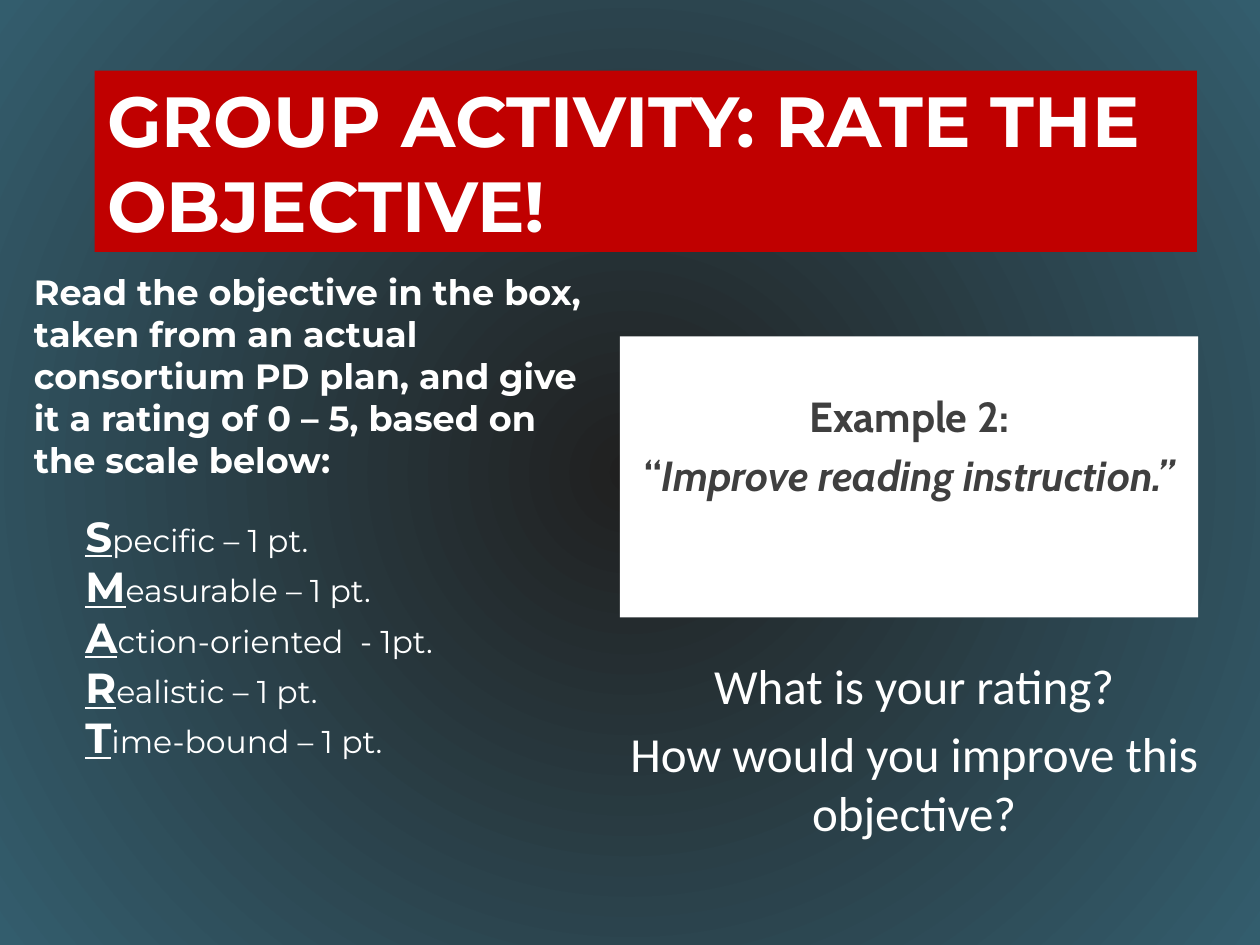
import pptx
import pptx.dml.color
import pptx.enum.shapes
import pptx.enum.text
import pptx.oxml
import pptx.oxml.ns
import pptx.util

Inches = pptx.util.Inches
Pt = pptx.util.Pt
Align = pptx.enum.text.PP_ALIGN
Anchor = pptx.enum.text.MSO_ANCHOR

WHITE = "FFFFFF"
RED = "C00000"
CHARCOAL = "3F3F3F"
GLOW = "202020"
TEAL = "335D6D"


def color(hex_value):
    return pptx.dml.color.RGBColor.from_string(hex_value)


class ActivitySlide:
    heading_font = "Montserrat"
    example_font = "Cabin"
    question_font = "Calibri"

    def __init__(self, deck):
        self.page = deck.slides.add_slide(deck.slide_layouts[5])

    def background(self, center, edge):
        """Fill the page with a gradient that spreads in circles from the middle."""
        fill = self.page.background.fill
        fill.gradient()
        for stop, position, shade in zip(fill.gradient_stops, (0, 1), (center, edge)):
            stop.position = position
            stop.color.rgb = color(shade)
        gradient = self.page.element.find(".//" + pptx.oxml.ns.qn("a:gradFill"))
        linear = gradient.find(pptx.oxml.ns.qn("a:lin"))
        circle = pptx.oxml.parse_xml(
            f'<a:path {pptx.oxml.ns.nsdecls("a")} path="circle">'
            '<a:fillToRect l="50000" t="50000" r="50000" b="50000"/></a:path>'
        )
        gradient.replace(linear, circle)

    def add_paragraphs(self, box, paragraphs, font, ink, align=Align.LEFT,
                       anchor=Anchor.TOP, gap=0, top_inset=0.05):
        """Each paragraph is a list of (text, size, font attributes)."""
        frame = box.text_frame
        frame.word_wrap = True
        frame.auto_size = pptx.enum.text.MSO_AUTO_SIZE.NONE
        frame.vertical_anchor = anchor
        frame.margin_top = Inches(top_inset)
        for index, spans in enumerate(paragraphs):
            para = frame.add_paragraph() if index else frame.paragraphs[0]
            para.alignment = align
            para.space_before = Pt(gap if index else 0)
            for text, size, attributes in spans:
                span = para.add_run()
                span.text = text
                span.font.name = font
                span.font.size = Pt(size)
                span.font.color.rgb = color(ink)
                span.font.bold = "bold" in attributes
                span.font.italic = "italic" in attributes
                span.font.underline = "underline" in attributes

    def title(self, left, top, width, height, text, size):
        box = self.page.shapes.title
        box.left, box.top = Inches(left), Inches(top)
        box.width, box.height = Inches(width), Inches(height)
        box.fill.solid()
        box.fill.fore_color.rgb = color(RED)
        self.add_paragraphs(box, [[(text, size, ["bold"])]], self.heading_font,
                            WHITE, anchor=Anchor.MIDDLE)

    def text(self, left, top, width, height, paragraphs, font, **layout):
        box = self.page.shapes.add_textbox(
            Inches(left), Inches(top), Inches(width), Inches(height))
        self.add_paragraphs(box, paragraphs, font, WHITE, **layout)

    def panel(self, left, top, width, height, paragraphs, **layout):
        box = self.page.shapes.add_shape(
            pptx.enum.shapes.MSO_SHAPE.RECTANGLE,
            Inches(left), Inches(top), Inches(width), Inches(height))
        box.shadow.inherit = False
        box.fill.solid()
        box.fill.fore_color.rgb = color(WHITE)
        box.line.fill.background()
        self.add_paragraphs(box, paragraphs, self.example_font, CHARCOAL, **layout)


def main():
    deck = pptx.Presentation()
    deck.slide_width = Inches(10)
    deck.slide_height = Inches(7.5)

    slide = ActivitySlide(deck)
    slide.background(GLOW, TEAL)
    slide.title(0.75, 0.56, 8.75, 1.44, "GROUP ACTIVITY: RATE THE OBJECTIVE!", 40.5)

    instructions = ("Read the objective in the box, taken from an actual consortium "
                    "PD plan, and give it a rating of 0 – 5, based on the scale below:")
    slide.text(0.17, 2.1, 4.58, 1.8, [[(instructions, 20, ["bold"])]],
               slide.heading_font)

    example = [
        [("Example 2:", 24, ["bold"])],
        [("“", 24, ["bold"]),
         ("Improve reading instruction.”", 24, ["bold", "italic"])],
    ]
    slide.panel(4.92, 2.67, 4.59, 2.23, example, align=Align.CENTER,
                gap=4.8, top_inset=0.43)

    criteria = ["Specific – 1 pt.", "Measurable – 1 pt.", "Action-oriented  - 1pt.",
                "Realistic – 1 pt.", "Time-bound – 1 pt."]
    scale = [[(item[0], 24, ["bold", "underline"]), (item[1:], 18, [])]
             for item in criteria]
    slide.text(0.58, 4, 3.33, 2.12, scale, slide.heading_font)

    questions = ["What is your rating?", "How would you improve this objective?"]
    slide.text(4.67, 5.15, 5.17, 1.61, [[(question, 28, [])] for question in questions],
               slide.question_font, align=Align.CENTER, gap=5.6)

    deck.save("out.pptx")


if __name__ == "__main__":
    main()
